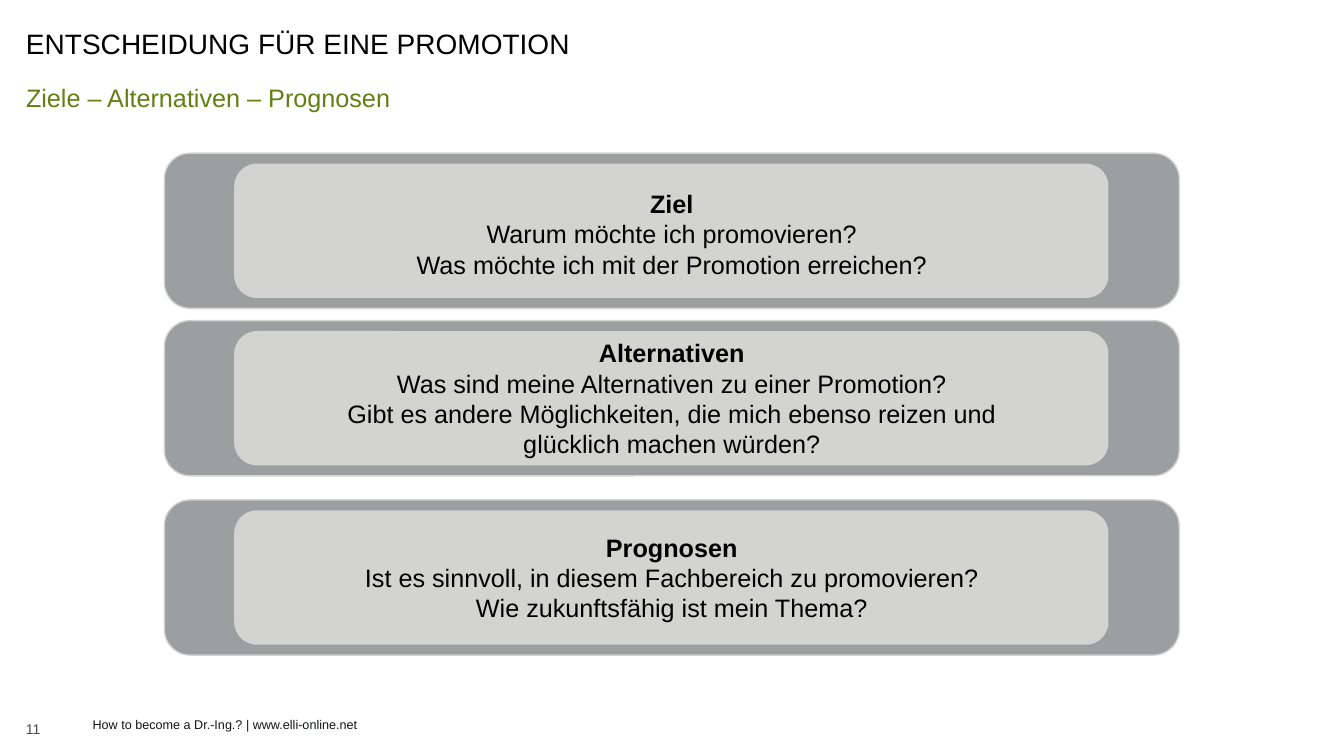
from dataclasses import dataclass

from pptx import Presentation
from pptx.dml.color import RGBColor
from pptx.enum.shapes import MSO_SHAPE
from pptx.enum.text import MSO_ANCHOR, PP_ALIGN
from pptx.slide import Slide
from pptx.util import Pt

FRAME_LEFT, FRAME_WIDTH, FRAME_HEIGHT = 117.4, 725, 110.9
PANEL_LEFT, PANEL_WIDTH, PANEL_HEIGHT = 167.8, 623.5, 95
PANEL_INSET = (FRAME_HEIGHT - PANEL_HEIGHT) / 2
QUESTIONS_LEFT, QUESTIONS_WIDTH = 239.8, 480
FRAME_GRAY = "9C9E9F"
PANEL_GRAY = "D3D3D1"


@dataclass(frozen=True)
class Area:
    left: float
    top: float
    width: float
    height: float

    def lengths(self) -> tuple[Pt, Pt, Pt, Pt]:
        return Pt(self.left), Pt(self.top), Pt(self.width), Pt(self.height)


@dataclass(frozen=True)
class Label:
    area: Area
    lines: tuple[str, ...]
    size: float
    color: str = "000000"
    anchor: MSO_ANCHOR = MSO_ANCHOR.MIDDLE
    alignment: PP_ALIGN = PP_ALIGN.LEFT
    line_spacing: float = 1.0
    bold_first: bool = False
    inset: bool = True


@dataclass(frozen=True)
class Topic:
    frame_top: float
    text_top: float
    text_height: float
    lines: tuple[str, ...]


LABELS = (
    Label(Area(11.5, 15.8, 674.6, 28.1), ("ENTSCHEIDUNG FÜR EINE PROMOTION",), 20, line_spacing=1.1),
    Label(Area(11.5, 53.3, 937.4, 29.5), ("Ziele – Alternativen – Prognosen",), 18, "637F13",
          MSO_ANCHOR.TOP, line_spacing=1.1),
    Label(Area(11.5, 511.9, 77, 17.3), ("11",), 10, "4D4D4D"),
    Label(Area(66.2, 504, 544.3, 26.6), ("How to become a Dr.-Ing.? | www.elli-online.net",), 9,
          "141616", inset=False),
)

TOPICS = (
    Topic(109.4, 131, 72.7, (
        "Ziel",
        "Warum möchte ich promovieren?",
        "Was möchte ich mit der Promotion erreichen?",
    )),
    Topic(229, 237.6, 94.3, (
        "Alternativen",
        "Was sind meine Alternativen zu einer Promotion?",
        "Gibt es andere Möglichkeiten, die mich ebenso reizen und glücklich machen würden?",
    )),
    Topic(357.1, 376.6, 72.7, (
        "Prognosen",
        "Ist es sinnvoll, in diesem Fachbereich zu promovieren?",
        "Wie zukunftsfähig ist mein Thema?",
    )),
)


def color_of(value: str) -> RGBColor:
    return RGBColor.from_string(value)


def apply_format(target: object, values: dict[str, object]) -> None:
    for name, value in values.items():
        setattr(target, name, value)


def add_label(page: Slide, label: Label) -> None:
    frame = page.shapes.add_textbox(*label.area.lengths()).text_frame
    apply_format(frame, {"word_wrap": True, "vertical_anchor": label.anchor})
    if not label.inset:
        apply_format(frame, {f"margin_{side}": Pt(0) for side in ("left", "top", "right", "bottom")})
    for index, line in enumerate(label.lines):
        para = frame.add_paragraph() if index else frame.paragraphs[0]
        apply_format(para, {"alignment": label.alignment, "line_spacing": label.line_spacing})
        span = para.add_run()
        span.text = line
        apply_format(span.font, {
            "name": "Arial",
            "size": Pt(label.size),
            "bold": label.bold_first and index == 0,
        })
        span.font.color.rgb = color_of(label.color)


def add_panel(page: Slide, area: Area, fill: str) -> None:
    box = page.shapes.add_shape(MSO_SHAPE.ROUNDED_RECTANGLE, *area.lengths())
    box.shadow.inherit = False
    box.fill.solid()
    box.fill.fore_color.rgb = color_of(fill)
    box.line.color.rgb = color_of(PANEL_GRAY)
    box.line.width = Pt(1)


def add_topic(page: Slide, topic: Topic) -> None:
    add_panel(page, Area(FRAME_LEFT, topic.frame_top, FRAME_WIDTH, FRAME_HEIGHT), FRAME_GRAY)
    panel_top = topic.frame_top + PANEL_INSET
    add_panel(page, Area(PANEL_LEFT, panel_top, PANEL_WIDTH, PANEL_HEIGHT), PANEL_GRAY)
    text_area = Area(QUESTIONS_LEFT, topic.text_top, QUESTIONS_WIDTH, topic.text_height)
    add_label(page, Label(text_area, topic.lines, 18, anchor=MSO_ANCHOR.TOP,
                          alignment=PP_ALIGN.CENTER, bold_first=True))


def main() -> None:
    deck = Presentation()
    apply_format(deck, {"slide_width": Pt(960), "slide_height": Pt(540)})
    page = deck.slides.add_slide(deck.slide_layouts[6])
    for label in LABELS:
        add_label(page, label)
    for topic in TOPICS:
        add_topic(page, topic)
    deck.save("out.pptx")


if __name__ == "__main__":
    main()
